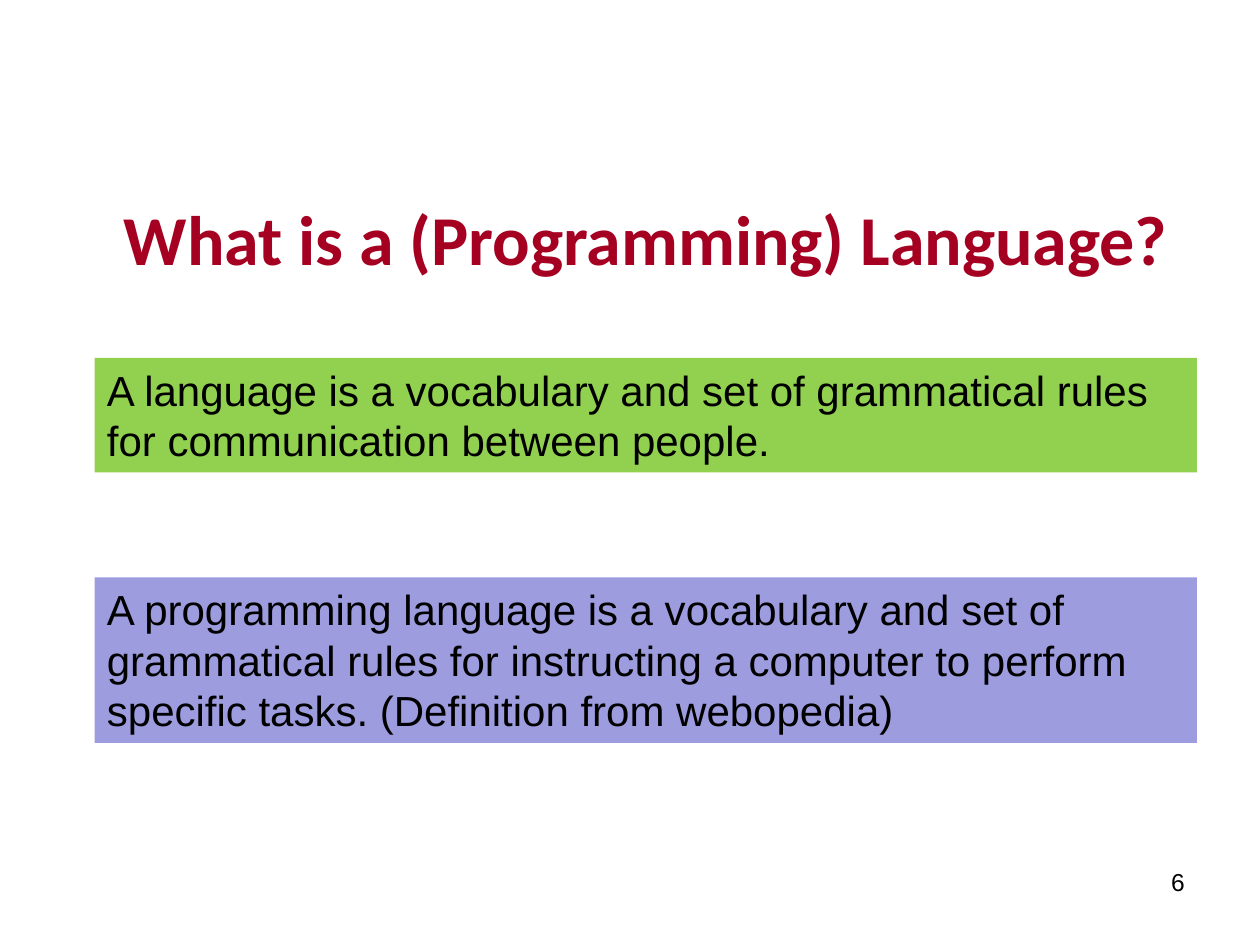
"""Build a slide that defines a language and a programming language."""
from dataclasses import dataclass

from pptx import Presentation
from pptx.dml.color import RGBColor as Color
from pptx.enum.shapes import MSO_SHAPE as Shape
from pptx.enum.text import MSO_ANCHOR as Anchor, PP_ALIGN as Align
from pptx.util import Pt


@dataclass(frozen=True)
class Theme:
    title_font: str = "Calibri"
    body_font: str = "Arial"
    title_size: int = 40
    body_size: int = 24
    number_size: int = 14
    title_color: str = "A50021"
    text_color: str = "000000"
    language_fill: str = "92D050"
    programming_fill: str = "9C9CDF"


THEME = Theme()


def write_text(box, text, *, size, font=THEME.body_font, color=THEME.text_color,
               bold=False, align=Align.LEFT, anchor=Anchor.TOP):
    frame = box.text_frame
    frame.word_wrap = True
    frame.vertical_anchor = anchor
    para = frame.paragraphs[0]
    para.alignment = align
    span = para.add_run()
    span.text = text
    span.font.name = font
    span.font.size = Pt(size)
    span.font.bold = bold
    span.font.color.rgb = Color.from_string(color)


def add_label(page, text, left, top, width, height, **style):
    box = page.shapes.add_textbox(Pt(left), Pt(top), Pt(width), Pt(height))
    write_text(box, text, **style)


def add_definition(page, text, top, height, fill):
    box = page.shapes.add_shape(Shape.RECTANGLE, Pt(54), Pt(top), Pt(630), Pt(height))
    box.shadow.inherit = False
    box.fill.solid()
    box.fill.fore_color.rgb = Color.from_string(fill)
    box.line.fill.background()
    write_text(box, text, size=THEME.body_size)


def main():
    deck = Presentation()
    deck.slide_width, deck.slide_height = Pt(720), Pt(540)
    page = deck.slides.add_slide(deck.slide_layouts[6])

    add_label(page, "What is a (Programming) Language?", 63, 78, 612, 116,
              size=THEME.title_size, font=THEME.title_font, color=THEME.title_color,
              bold=True, align=Align.CENTER, anchor=Anchor.MIDDLE)
    add_definition(page, "A language is a vocabulary and set of grammatical rules "
                   "for communication between people.",
                   204.5, 65.5, THEME.language_fill)
    add_definition(page, "A programming language is a vocabulary and set of "
                   "grammatical rules for instructing a computer to perform "
                   "specific tasks. (Definition from webopedia)",
                   330, 94.5, THEME.programming_fill)
    add_label(page, "6", 516, 492, 168, 37.5,
              size=THEME.number_size, align=Align.RIGHT)

    deck.save("out.pptx")


if __name__ == "__main__":
    main()
